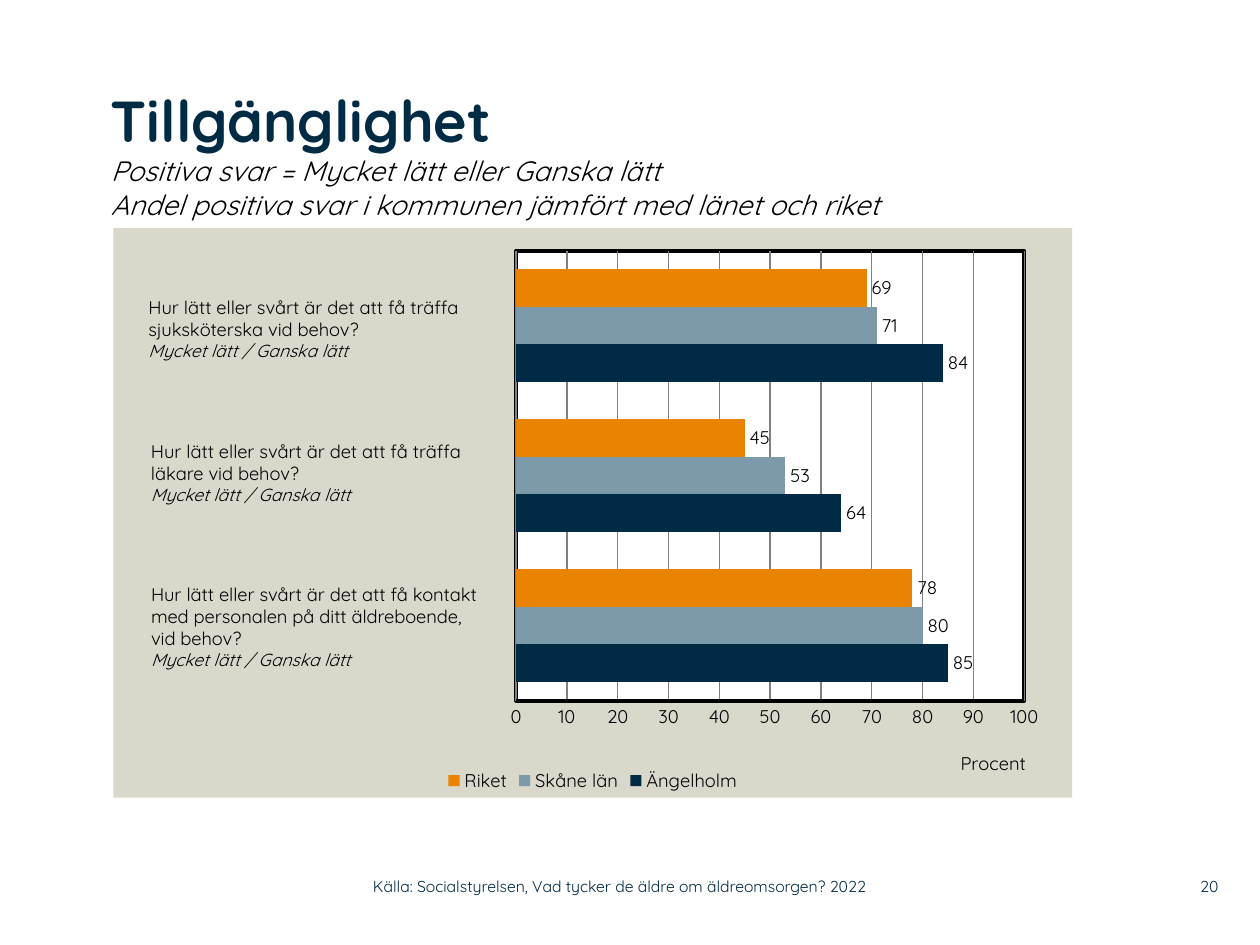
"""Build the accessibility slide: grouped bars with survey questions beside them."""
from pptx import Presentation
from pptx.chart.data import CategoryChartData as ChartData
from pptx.dml.color import RGBColor
from pptx.enum.chart import XL_CHART_TYPE as ChartType
from pptx.enum.chart import XL_LABEL_POSITION as LabelPosition
from pptx.enum.chart import XL_LEGEND_POSITION as LegendPosition
from pptx.enum.chart import XL_TICK_MARK as TickMark
from pptx.enum.text import MSO_ANCHOR as Anchor
from pptx.enum.text import PP_ALIGN as Align
from pptx.oxml import parse_xml
from pptx.oxml.ns import nsdecls, qn
from pptx.util import Inches, Pt

FONT = "Quicksand"
NAVY, BLACK, WHITE = "002B45", "000000", "FFFFFF"
ORANGE, STEEL, SAND, GREY = "E98300", "7D9AAA", "DAD7CB", "808080"
WIDTH, HEIGHT = Inches(10), Inches(7.5)
COLUMNS, ROWS = 100, 75

HEADING = "Tillgänglighet"
SUBTITLES = ["Positiva svar = Mycket lätt eller Ganska lätt",
             "Andel positiva svar i kommunen jämfört med länet och riket"]
ANSWER = "Mycket lätt / Ganska lätt"
QUESTIONS = [
    ((10.8, 23, 29.9, 8.1),
     ["Hur lätt eller svårt är det att få träffa sjuksköterska vid behov?"]),
    ((11, 34.4, 29.3, 8.1),
     ["Hur lätt eller svårt är det att få träffa", "läkare vid behov?"]),
    ((11, 45.8, 30.1, 9.8),
     ["Hur lätt eller svårt är det att få kontakt",
      "med personalen på ditt äldreboende,", "vid behov?"]),
]
SERIES = [("Ängelholm", (85, 64, 84), NAVY),
          ("Skåne län", (80, 53, 71), STEEL),
          ("Riket", (78, 45, 69), ORANGE)]
SOURCE = "Källa: Socialstyrelsen, Vad tycker de äldre om äldreomsorgen? 2022"


def colour(hex_code):
    """Turn a hex string into a colour."""
    return RGBColor.from_string(hex_code)


def place(left, top, width, height):
    """Turn grid columns and rows into slide lengths."""
    return (int(WIDTH * left / COLUMNS), int(HEIGHT * top / ROWS),
            int(WIDTH * width / COLUMNS), int(HEIGHT * height / ROWS))


def style(font, size, hex_code=BLACK, bold=False, italic=False):
    """Set the typeface, size, colour and emphasis of a font."""
    font.name, font.size = FONT, Pt(size)
    font.bold, font.italic = bold, italic
    font.color.rgb = colour(hex_code)


def add_frame(slide, area, inset=True):
    """Add a wrapping text box and return its text frame."""
    frame = slide.shapes.add_textbox(*place(*area)).text_frame
    frame.word_wrap = True
    if not inset:
        frame.margin_left = frame.margin_right = 0
        frame.margin_top = frame.margin_bottom = 0
    return frame


def add_heading(slide):
    """Add the heading with its two italic lines."""
    paragraph = add_frame(slide, (8.8, 6.7, 77.7, 11.4), inset=False).paragraphs[0]
    heading = paragraph.add_run()
    heading.text = HEADING
    style(heading.font, 33, NAVY, bold=True)
    for line in SUBTITLES:
        paragraph.add_line_break()
        subtitle = paragraph.add_run()
        subtitle.text = line
        style(subtitle.font, 16, italic=True)


def add_question(slide, area, lines):
    """Add a survey question followed by the answers counted as positive."""
    frame = add_frame(slide, area)
    frame.text = "\n".join([*lines, ANSWER])
    *question, answer = frame.paragraphs
    for paragraph in question:
        style(paragraph.font, 10.5)
    style(answer.font, 10, italic=True)


def add_footer(slide, area, text, align=Align.LEFT):
    """Add a small vertically centred footer text."""
    frame = add_frame(slide, area, inset=False)
    frame.vertical_anchor = Anchor.MIDDLE
    frame.text = text
    frame.paragraphs[0].alignment = align
    style(frame.paragraphs[0].font, 9, NAVY)


def set_layout(parent, target="", **shares):
    """Fix a chart part at shares of the chart's size."""
    existing = parent.find(qn("c:layout"))
    position = 0
    if existing is not None:
        position = parent.index(existing)
        parent.remove(existing)
    modes = "".join(f'<c:{side}Mode val="edge"/>' for side in "xy")
    values = "".join(f'<c:{side} val="{share}"/>' for side, share in shares.items())
    parent.insert(position, parse_xml(
        f'<c:layout {nsdecls("c")}><c:manualLayout>{target}{modes}{values}'
        "</c:manualLayout></c:layout>"))


def area_format(fill, line):
    """Return chart XML for a solid fill and the given outline content."""
    return parse_xml(
        f'<c:spPr {nsdecls("c", "a")}><a:solidFill><a:srgbClr val="{fill}"/>'
        f"</a:solidFill>{line}</c:spPr>")


def style_areas(chart):
    """Colour the chart and plot backgrounds and place the plot."""
    body = chart.element.find(qn("c:chart"))
    body.addnext(area_format(SAND, "<a:ln><a:noFill/></a:ln>"))
    plot_area = body.find(qn("c:plotArea"))
    set_layout(plot_area, '<c:layoutTarget val="inner"/>',
               x=0.42, y=0.04, w=0.53, h=0.79)
    plot_area.append(area_format(
        WHITE, f'<a:ln w="{Pt(2.25)}"><a:solidFill><a:srgbClr val="{BLACK}"/>'
               "</a:solidFill></a:ln>"))


def style_axes(chart):
    """Hide the category axis and format the percentage axis."""
    chart.category_axis.visible = False
    percent = chart.value_axis
    percent.minimum_scale, percent.maximum_scale, percent.major_unit = 0, 100, 10
    percent.major_tick_mark = percent.minor_tick_mark = TickMark.NONE
    percent.format.line.color.rgb = colour(BLACK)
    percent.format.line.width = Pt(2)
    percent.has_major_gridlines = True
    percent.major_gridlines.format.line.color.rgb = colour(GREY)
    percent.major_gridlines.format.line.width = Pt(0.75)
    style(percent.tick_labels.font, 10.5)
    caption = percent.axis_title
    caption.text_frame.text = "Procent"
    style(caption.text_frame.paragraphs[0].font, 10.5)
    set_layout(caption.element, x=0.88, y=0.91)


def add_bars(slide):
    """Add the bar chart comparing municipality, county and country."""
    answers = ChartData()
    answers.categories = ["1", "2", "3"]
    for name, values, _ in SERIES:
        answers.add_series(name, values)
    chart = slide.shapes.add_chart(
        ChartType.BAR_CLUSTERED, *place(9, 18.1, 76.1, 45.2), answers).chart
    chart.has_title = False
    style(chart.font, 10.5)
    chart.has_legend = True
    chart.legend.position = LegendPosition.BOTTOM
    chart.legend.include_in_layout = False
    style(chart.legend.font, 10.5)
    bars = chart.plots[0]
    bars.gap_width, bars.overlap, bars.vary_by_categories = 100, 0, False
    for series, (_, _, hex_code) in zip(bars.series, SERIES):
        series.format.fill.solid()
        series.format.fill.fore_color.rgb = colour(hex_code)
        labels = series.data_labels
        labels.show_value = True
        labels.position = LabelPosition.OUTSIDE_END
        style(labels.font, 10.5)
    style_axes(chart)
    style_areas(chart)


def main():
    """Build and save the slide."""
    deck = Presentation()
    deck.slide_width, deck.slide_height = WIDTH, HEIGHT
    slide = deck.slides.add_slide(deck.slide_layouts[6])
    add_heading(slide)
    add_bars(slide)
    for area, lines in QUESTIONS:
        add_question(slide, area, lines)
    add_footer(slide, (29.6, 68.9, 44.3, 2.9), SOURCE)
    add_footer(slide, (92, 68.9, 4.7, 2.9), "20", Align.RIGHT)
    deck.save("out.pptx")


if __name__ == "__main__":
    main()
